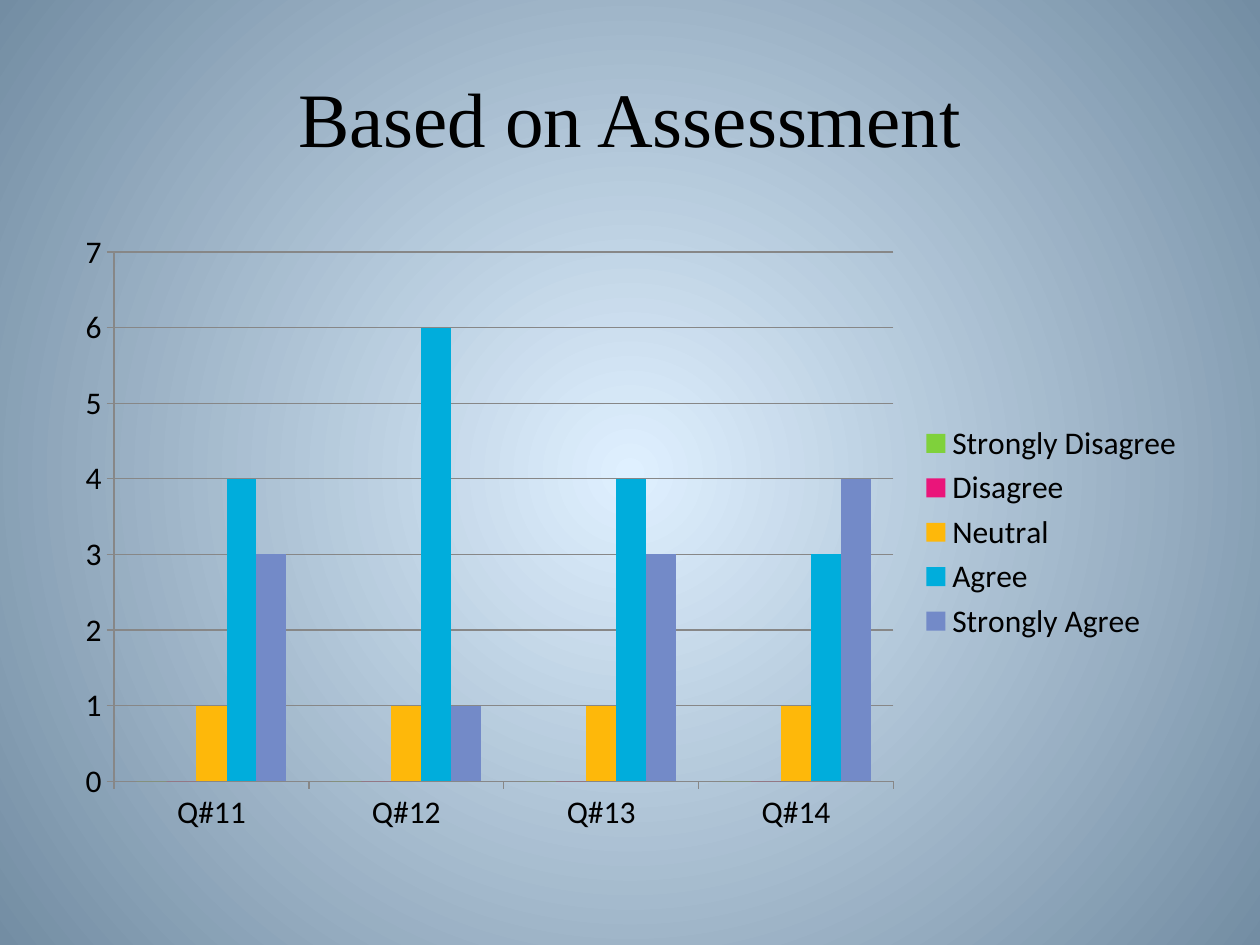
from lxml.etree import SubElement
from pptx import Presentation
from pptx.chart.data import CategoryChartData as Data
from pptx.dml.color import RGBColor as RGB
from pptx.enum.chart import XL_CHART_TYPE as Kind
from pptx.enum.chart import XL_LEGEND_POSITION as Side
from pptx.enum.chart import XL_TICK_MARK as Tick
from pptx.enum.text import MSO_ANCHOR as Anchor
from pptx.enum.text import PP_ALIGN as Align
from pptx.oxml.ns import qn
from pptx.util import Inches, Pt

BLACK = RGB(0x00, 0x00, 0x00)
GREY = RGB(0x87, 0x87, 0x87)
PALE = RGB(0xDF, 0xF0, 0xFF)
SLATE = RGB(0x73, 0x8D, 0xA3)
GREEN = RGB(0x7F, 0xD1, 0x3B)
PINK = RGB(0xEA, 0x15, 0x7A)
AMBER = RGB(0xFE, 0xB8, 0x0A)
CYAN = RGB(0x00, 0xAD, 0xDC)
BLUE = RGB(0x73, 0x8A, 0xC8)

ITEMS = ["Q#11", "Q#12", "Q#13", "Q#14"]
VOTES = [
    ("Strongly Disagree", GREEN, (0, 0, 0, 0)),
    ("Disagree", PINK, (0, 0, 0, 0)),
    ("Neutral", AMBER, (1, 1, 1, 1)),
    ("Agree", CYAN, (4, 6, 4, 3)),
    ("Strongly Agree", BLUE, (3, 1, 3, 4)),
]


class Deck:
    head = "Times New Roman"
    body = "Calibri"

    def __init__(self):
        self.prs = Presentation()
        self.prs.slide_width = Inches(10)
        self.prs.slide_height = Inches(7.5)
        self.slide = self.prs.slides.add_slide(self.prs.slide_layouts[6])

    def place(self, x, y, w, h):
        """Turn shares of the slide's size into lengths."""
        wide, high = self.prs.slide_width, self.prs.slide_height
        return int(x * wide), int(y * high), int(w * wide), int(h * high)

    def glow(self, inner, outer):
        """Fill the background with a round gradient from the centre."""
        fill = self.slide.background.fill
        fill.gradient()
        for stop, color, pos in zip(fill.gradient_stops, (inner, outer), (0, 1)):
            stop.color.rgb = color
            stop.position = pos
        grad = self.slide.element.find(".//" + qn("a:gradFill"))
        grad.remove(grad.find(qn("a:lin")))
        ring = SubElement(grad, qn("a:path"), path="circle")
        SubElement(ring, qn("a:fillToRect"),
                   {side: "50000" for side in "ltrb"})

    def style(self, font, name, size):
        font.name, font.size = name, Pt(size)
        font.color.rgb = BLACK

    def title(self, text, area):
        frame = self.slide.shapes.add_textbox(*self.place(*area)).text_frame
        frame.word_wrap = True
        frame.vertical_anchor = Anchor.MIDDLE
        para = frame.paragraphs[0]
        para.alignment = Align.CENTER
        run = para.add_run()
        run.text = text
        self.style(run.font, self.head, 44)

    def axis(self, axis):
        axis.major_tick_mark = Tick.OUTSIDE
        axis.minor_tick_mark = Tick.NONE
        axis.format.line.color.rgb = GREY

    def bars(self, cats, rows, top, area):
        data = Data(number_format="General")
        data.categories = cats
        for name, _, vals in rows:
            data.add_series(name, vals)
        chart = self.slide.shapes.add_chart(
            Kind.COLUMN_CLUSTERED, *self.place(*area), data).chart
        self.style(chart.font, self.body, 18)
        chart.has_title = False
        chart.has_legend = True
        chart.legend.position = Side.RIGHT
        chart.legend.include_in_layout = False

        self.axis(chart.category_axis)
        scale = chart.value_axis
        self.axis(scale)
        scale.minimum_scale, scale.maximum_scale, scale.major_unit = 0, top, 1
        scale.has_major_gridlines = True
        scale.major_gridlines.format.line.color.rgb = GREY

        plot = chart.plots[0]
        plot.vary_by_categories = False
        plot.gap_width, plot.overlap = 150, 0
        for bar, (_, color, _) in zip(plot.series, rows):
            bar.format.fill.solid()
            bar.format.fill.fore_color.rgb = color


def main():
    deck = Deck()
    deck.glow(PALE, SLATE)
    deck.title("Based on Assessment", (0.05, 0.04, 0.9, 1 / 6))
    deck.bars(ITEMS, VOTES, 7, (0.05, 7 / 30, 0.9, 0.66))
    deck.prs.save("out.pptx")


if __name__ == "__main__":
    main()
